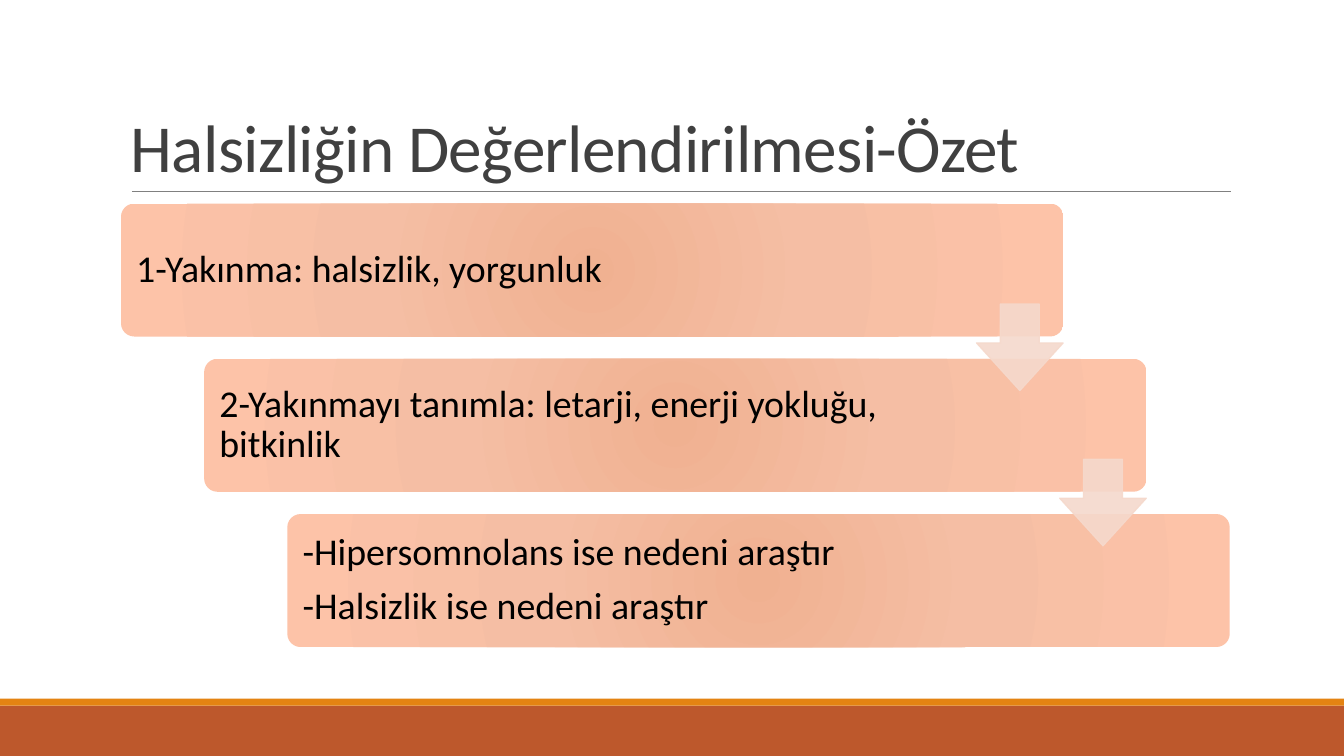
from pptx import Presentation
from pptx.dml.color import RGBColor
from pptx.enum.shapes import MSO_CONNECTOR, MSO_SHAPE
from pptx.enum.text import MSO_ANCHOR, PP_ALIGN
from pptx.oxml import parse_xml
from pptx.oxml.ns import nsdecls, qn
from pptx.util import Pt

RECT, ROUND = MSO_SHAPE.RECTANGLE, MSO_SHAPE.ROUNDED_RECTANGLE
DOWN_ARROW = MSO_SHAPE.DOWN_ARROW
STRAIGHT = MSO_CONNECTOR.STRAIGHT
MIDDLE, BOTTOM = MSO_ANCHOR.MIDDLE, MSO_ANCHOR.BOTTOM
LEFT = PP_ALIGN.LEFT

COLORS = {
    "band": "BD582C", "stripe": "E48312", "rule": "808080",
    "title": "404040", "text": "000000", "arrow": "F5D9CC",
    "inner": "F0B191", "mid": "F5BEA4", "outer": "FDC3A8",
}
FONT = "Calibri"
TITLE = "Halsizliğin Değerlendirilmesi-Özet"
# Paragraphs and text width of each step
STEPS = [
    (["1-Yakınma: halsizlik, yorgunluk"], 571),
    (["2-Yakınmayı tanımla: letarji, enerji yokluğu, bitkinlik"], 546.5),
    (["-Hipersomnolans ise nedeni araştır",
      "-Halsizlik ise nedeni araştır"], 546.5),
]
STEP_X, STEP_Y = 59.4, 110.88
TITLE_FORMAT = {"line_spacing": 0.85, "alignment": LEFT}
STEP_FORMAT = {"line_spacing": 0.9, "space_after": Pt(9.45), "alignment": LEFT}


def rgb(name):
    return RGBColor.from_string(COLORS[name])


def add_shape(slide, kind, box, fill=None, adjustments=()):
    s = slide.shapes.add_shape(kind, *map(Pt, box))
    s.shadow.inherit = False
    s.line.fill.background()
    if fill:
        s.fill.solid()
        s.fill.fore_color.rgb = rgb(fill)
    for i, value in enumerate(adjustments):
        s.adjustments[i] = value
    return s


def add_text(slide, box, lines, size, color, anchor, insets, para_format):
    tb = slide.shapes.add_textbox(*map(Pt, box))
    tf = tb.text_frame
    frame_format = {"word_wrap": True, "vertical_anchor": anchor}
    sides = ("margin_left", "margin_top", "margin_right", "margin_bottom")
    frame_format.update(zip(sides, map(Pt, insets)))
    for name, value in frame_format.items():
        setattr(tf, name, value)
    for i, line in enumerate(lines):
        p = tf.add_paragraph() if i else tf.paragraphs[0]
        for name, value in para_format.items():
            setattr(p, name, value)
        r = p.add_run()
        r.text = line
        for name, value in {"name": FONT, "size": Pt(size)}.items():
            setattr(r.font, name, value)
        r.font.color.rgb = rgb(color)
    return tb


def add_rule(slide, x1, x2, y):
    c = slide.shapes.add_connector(STRAIGHT, Pt(x1), Pt(y), Pt(x2), Pt(y))
    c.line.width = Pt(0.5)
    c.line.color.rgb = rgb("rule")
    c._element.spPr.append(parse_xml(f'<a:effectLst {nsdecls("a")}/>'))


def add_step_box(slide, box):
    s = add_shape(slide, ROUND, box, adjustments=[0.1])
    s.fill.background()
    # Circular gradient takes the place of the empty fill
    stops = "".join(
        f'<a:gs pos="{pos * 1000}"><a:srgbClr val="{COLORS[name]}"/></a:gs>'
        for pos, name in ((0, "inner"), (45, "mid"), (100, "outer")))
    gradient = parse_xml(
        f'<a:gradFill {nsdecls("a")} rotWithShape="1"><a:gsLst>{stops}</a:gsLst>'
        '<a:path path="circle"><a:fillToRect l="100000" t="100000" '
        'r="100000" b="100000"/></a:path></a:gradFill>')
    spPr = s._element.spPr
    spPr.replace(spPr.find(qn("a:noFill")), gradient)


def add_arrow(slide, box):
    s = add_shape(slide, DOWN_ARROW, box, "arrow", [0.45, 0.55])
    s.line.width = Pt(1)
    s.line.color.rgb = rgb("arrow")
    for color in s._element.spPr.iter(qn("a:srgbClr")):
        color.append(parse_xml(f'<a:alpha {nsdecls("a")} val="90000"/>'))


def main():
    prs = Presentation()
    prs.slide_width, prs.slide_height = Pt(960), Pt(540)
    slide = prs.slides.add_slide(prs.slide_layouts[6])

    # Footer bands and title
    add_shape(slide, RECT, (0, 504, 960, 36), "band")
    add_shape(slide, RECT, (0, 499, 960, 5), "stripe")
    add_rule(slide, 94.3, 879, 136.8)
    title = add_text(slide, (86.4, 22.5, 792, 114.2), [TITLE], 48, "title",
                     BOTTOM, (7.2, 3.6, 7.2, 3.6), TITLE_FORMAT)
    title.text_frame.paragraphs[0].runs[0].font._element.set("spc", "-50")

    # Staggered steps
    for i, (lines, width) in enumerate(STEPS):
        x, y = 86.4 + i * STEP_X, 145.4 + i * STEP_Y
        add_step_box(slide, (x, y, 673.2, 95))
        add_text(slide, (x + 2.8, y + 2.8, width, 89.4), lines, 27, "text",
                 MIDDLE, (8.1,) * 4, STEP_FORMAT)

    # Arrows between steps
    for i in range(len(STEPS) - 1):
        add_arrow(slide, (697.6 + i * STEP_X, 217.2 + i * STEP_Y, 61.8, 61.8))

    prs.save("out.pptx")


if __name__ == "__main__":
    main()
